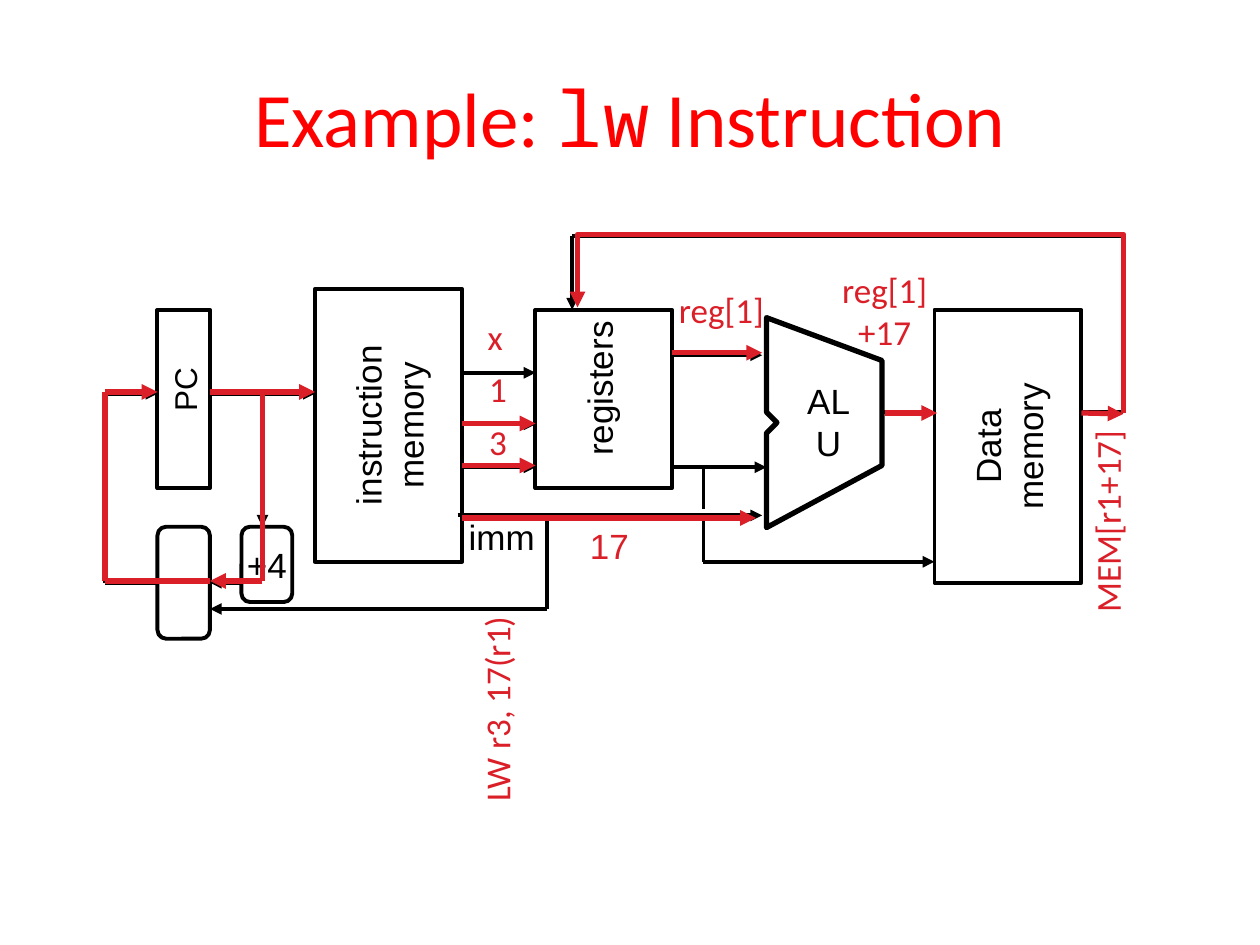
from dataclasses import dataclass

from lxml import etree
from pptx import Presentation
from pptx.dml.color import RGBColor
from pptx.enum.shapes import MSO_CONNECTOR, MSO_SHAPE
from pptx.enum.text import MSO_ANCHOR, MSO_AUTO_SIZE, PP_ALIGN
from pptx.oxml.ns import qn
from pptx.util import Pt

RECT, ROUND = MSO_SHAPE.RECTANGLE, MSO_SHAPE.ROUNDED_RECTANGLE
STRAIGHT = MSO_CONNECTOR.STRAIGHT
CENTER, MIDDLE = PP_ALIGN.CENTER, MSO_ANCHOR.MIDDLE
FIT_TEXT = MSO_AUTO_SIZE.SHAPE_TO_FIT_TEXT
LEFT, RIGHT = 1, 3


@dataclass(frozen=True)
class Theme:
    ink: RGBColor = RGBColor(0x00, 0x00, 0x00)
    paper: RGBColor = RGBColor(0xFF, 0xFF, 0xFF)
    active: RGBColor = RGBColor(0xDA, 0x1F, 0x28)
    title: RGBColor = RGBColor(0xFF, 0x00, 0x00)
    block_font: str = "Arial"
    value_font: str = "Calibri"
    code_font: str = "Noto Sans Mono"
    title_size: float = 44
    label_size: float = 20
    small_size: float = 18
    thin: float = 2.25
    thick: float = 3


T = Theme()


def style_run(r, font, size, color):
    r.font.name, r.font.size = font, Pt(size)
    r.font.color.rgb = color


def write(tf, text, font, size, color):
    tf.text = text
    tf.vertical_anchor = MIDDLE
    for p in tf.paragraphs:
        p.alignment = CENTER
        for r in p.runs:
            style_run(r, font, size, color)


def set_line(shape, color, width, arrow=False):
    shape.line.color.rgb = color
    shape.line.width = Pt(width)
    if arrow:
        ln = shape.element.spPr.find(qn("a:ln"))
        etree.SubElement(ln, qn("a:tailEnd"), type="triangle")


def add_block(s, kind, left, top, width, height, text="", rotation=0):
    sp = s.shapes.add_shape(kind, Pt(left), Pt(top), Pt(width), Pt(height))
    sp.shadow.inherit = False
    sp.rotation = rotation
    sp.fill.solid()
    sp.fill.fore_color.rgb = T.paper
    set_line(sp, T.ink, T.thin)
    if text:
        sp.text_frame.word_wrap = False
        write(sp.text_frame, text, T.block_font, T.label_size, T.ink)
    return sp


def add_outline(s, points, color, arrow=False, close=False):
    start, *rest = [(Pt(x), Pt(y)) for x, y in points]
    builder = s.shapes.build_freeform(*start)
    builder.add_line_segments(rest, close=close)
    sp = builder.convert_to_shape()
    sp.shadow.inherit = False
    sp.fill.background()
    set_line(sp, color, T.thick, arrow)


def add_wire(s, points, color, width, arrow=True):
    """Join the points with straight lines; only the last one has an arrowhead."""
    wires = []
    for i, (a, b) in enumerate(zip(points, points[1:]), start=1):
        c = s.shapes.add_connector(STRAIGHT, *map(Pt, a + b))
        set_line(c, color, width, arrow and i == len(points) - 1)
        etree.SubElement(c.element.spPr, qn("a:effectLst"))
        wires.append(c)
    return wires


def add_label(s, text, left, top, width, height, font, color,
              rotation=0, size=T.label_size):
    sp = s.shapes.add_textbox(Pt(left), Pt(top), Pt(width), Pt(height))
    sp.rotation = rotation
    tf = sp.text_frame
    tf.word_wrap = False
    tf.auto_size = FIT_TEXT
    write(tf, text, font, size, color)


def add_title(s):
    sp = s.shapes.add_textbox(Pt(36), Pt(21.6), Pt(648), Pt(90))
    tf = sp.text_frame
    tf.word_wrap = True
    tf.vertical_anchor = MIDDLE
    p = tf.paragraphs[0]
    p.alignment = CENTER
    for text, font in (("Example: ", T.value_font), ("lw", T.code_font),
                       (" Instruction", T.value_font)):
        r = p.add_run()
        r.text = text
        style_run(r, font, T.title_size, T.title)


def add_blocks(s):
    add_outline(s, [(438, 181.5), (504, 206), (504, 266), (438, 301.5),
                    (438, 247.5), (444, 241.5), (438, 235.5)], T.ink, close=True)
    add_block(s, RECT, 90, 177, 30, 102)
    add_block(s, RECT, 144, 201, 156, 84, "instruction\nmemory", 270)
    add_block(s, ROUND, 138, 301, 29, 43, "+4")
    add_block(s, RECT, 306, 177, 78, 102)
    add_block(s, RECT, 498, 213, 156, 84, "Data\nmemory", 270)
    return add_block(s, ROUND, 90, 301, 30, 64)


def add_datapath(s, mux):
    for points in (
        [(504, 235.5), (534, 235.5)],
        [(120, 225), (180, 225)],
        [(264, 213), (306, 213)],
        [(264, 242.5), (306, 242.5)],
        [(264, 267), (306, 267)],
        [(384, 267), (438, 267)],
        [(261.5, 294.5), (435.5, 294.5)],
        [(384, 203), (435.5, 203)],
        [(402, 297), (402, 321), (534, 321)],
        [(618, 235.5), (642, 235.5), (642, 135), (327, 135), (327, 177)],
        [(150, 225), (150, 301)],
        [(312.5, 294.5), (312.5, 348), (120, 348)],
    ):
        add_wire(s, points, T.ink, T.thin)
    add_wire(s, [(402, 267), (402, 291)], T.ink, T.thin, arrow=False)

    # Next-PC loop, joined to the selector
    to_mux = add_wire(s, [(138, 333), (120, 333)], T.ink, T.thin)
    to_mux[0].end_connect(mux, RIGHT)
    to_pc = add_wire(s, [(90, 333), (60, 333), (60, 225), (90, 225)], T.ink, T.thin)
    to_pc[0].begin_connect(mux, LEFT)


def add_block_labels(s):
    add_label(s, "ALU", 447, 225.5, 53, 31, T.block_font, T.ink)
    add_label(s, "registers", 296.5, 206.5, 91.5, 31, T.block_font, T.ink, 270)
    add_label(s, "imm", 260.5, 291, 52.5, 31, T.block_font, T.ink)
    add_label(s, "PC", 85.7, 208, 39.6, 28.8, T.block_font, T.ink, 270, T.small_size)


def add_active_path(s):
    for points in (
        [(120, 224), (180, 224)],
        [(505.5, 236), (535.5, 236)],
        [(264, 242), (306, 242)],
        [(264, 296), (432, 296)],
        [(384, 201.6), (435.5, 201.6)],
        [(264, 266), (306, 266)],
        [(618, 236), (642, 236.5)],
        [(150, 225), (150, 332), (120, 332)],
        [(120, 332), (60, 332), (60, 224), (90, 224)],
    ):
        add_wire(s, points, T.active, T.thick)
    # Write-back from data memory to the registers
    add_outline(s, [(642, 236), (642, 134), (330, 134), (330, 175.7)],
                T.active, arrow=True)


def add_values(s):
    for text, *box in (
        ("x", 271.5, 176.4, 23, 31.5),
        ("1", 271.5, 206.5, 26, 31),
        ("3", 271.5, 237, 26, 31),
        ("reg[1]", 379.5, 161.3, 65.5, 31),
        ("reg[1]\v+17", 473.8, 149.8, 63.4, 55.4),
    ):
        add_label(s, text, *box, T.value_font, T.active)
    add_label(s, "17", 329.8, 296, 36.7, 31, T.block_font, T.active)
    add_label(s, "LW r3, 17(r1)", 223.2, 389.5, 121, 31.5, T.value_font, T.active, 270)
    add_label(s, "MEM[r1+17]", 573, 282.2, 119, 31.5, T.value_font, T.active, 270)


def main():
    prs = Presentation()
    prs.slide_width, prs.slide_height = Pt(720), Pt(540)
    s = prs.slides.add_slide(prs.slide_layouts[6])
    add_title(s)
    # Processor
    mux = add_blocks(s)
    add_datapath(s, mux)
    add_block_labels(s)
    # Signals of the running instruction
    add_active_path(s)
    add_values(s)
    prs.save("out.pptx")


if __name__ == "__main__":
    main()
